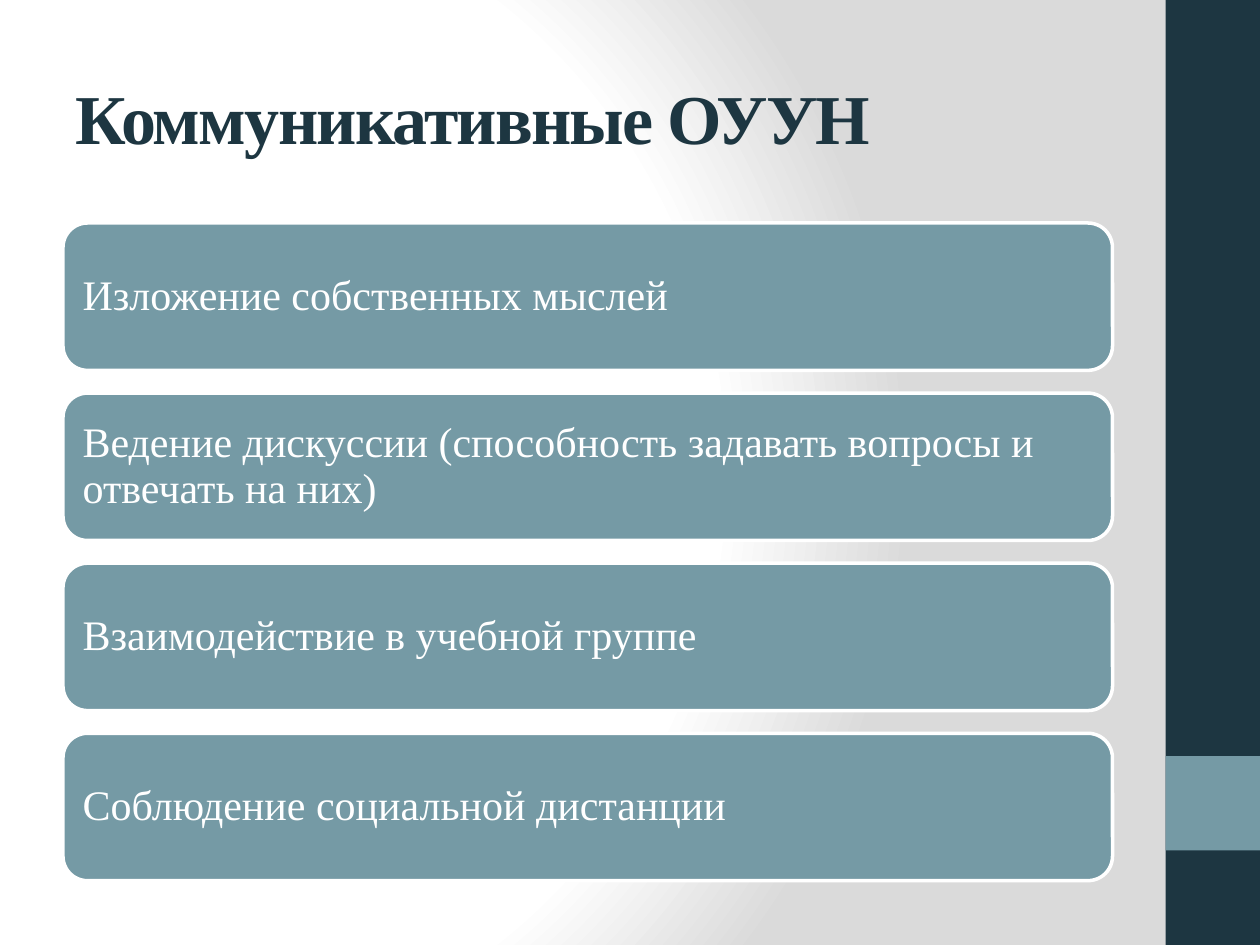
from pptx import Presentation
from pptx.dml.color import RGBColor
from pptx.enum.shapes import MSO_SHAPE as Shape
from pptx.enum.text import MSO_ANCHOR as Anchor, PP_ALIGN as Align
from pptx.oxml import parse_xml
from pptx.oxml.ns import nsdecls, qn
from pptx.util import Inches, Pt

TITLE = "Коммуникативные ОУУН"
SKILLS = [
    "Изложение собственных мыслей",
    "Ведение дискуссии (способность задавать вопросы и отвечать на них)",
    "Взаимодействие в учебной группе",
    "Соблюдение социальной дистанции",
]
FONT = "Times New Roman"
DARK, TEAL, WHITE, GREY = "1D3641", "759AA5", "FFFFFF", "DADADA"
BACKGROUND_STOPS = [(0, WHITE), (75, WHITE), (100, GREY)]
SIDE_BARS = [(0, 7.5, DARK), (6, 0.75, TEAL)]
LEFT, WIDTH = 0.5, 8.33
CARD_TOP, CARD_HEIGHT, CARD_STEP = 1.77, 1.17, 1.35


def color(value):
    return RGBColor.from_string(value)


def set_background(slide):
    slide.background.fill.solid()
    stops = "".join(
        f'<a:gs pos="{position * 1000}"><a:srgbClr val="{value}"/></a:gs>'
        for position, value in BACKGROUND_STOPS
    )
    gradient = parse_xml(
        f'<a:gradFill {nsdecls("a")} rotWithShape="1"><a:gsLst>{stops}</a:gsLst>'
        '<a:path path="circle"><a:fillToRect l="20000" t="50000" r="100000" b="50000"/>'
        "</a:path></a:gradFill>"
    )
    solid = next(slide.element.iter(qn("a:solidFill")))
    solid.getparent().replace(solid, gradient)


def add_block(slide, kind, box, fill):
    shape = slide.shapes.add_shape(kind, *map(Inches, box))
    shape.shadow.inherit = False
    shape.fill.solid()
    shape.fill.fore_color.rgb = color(fill)
    shape.line.fill.background()
    return shape


def write_text(shape, text, size, fill):
    frame = shape.text_frame
    frame.word_wrap = True
    frame.vertical_anchor = Anchor.MIDDLE
    frame.text = text
    paragraph = frame.paragraphs[0]
    paragraph.alignment = Align.LEFT
    paragraph.font.name = FONT
    paragraph.font.size = Pt(size)
    paragraph.font.color.rgb = color(fill)
    return paragraph


def add_title(slide):
    title = slide.shapes.title
    title.left, title.top = Inches(LEFT), Inches(0.3)
    title.width, title.height = Inches(WIDTH), Inches(1.25)
    paragraph = write_text(title, TITLE, 40, DARK)
    paragraph.font.bold = True
    paragraph.runs[0].font._element.set("spc", "-100")


def add_card(slide, index, text):
    top = CARD_TOP + index * CARD_STEP
    card = add_block(slide, Shape.ROUNDED_RECTANGLE, (LEFT, top, WIDTH, CARD_HEIGHT), TEAL)
    card.line.color.rgb = color(WHITE)
    card.line.width = Pt(2)
    frame = card.text_frame
    frame.margin_left = frame.margin_right = Inches(0.1)
    frame.margin_top = frame.margin_bottom = Inches(0.1)
    write_text(card, text, 24, WHITE).line_spacing = 0.9


def main():
    presentation = Presentation()
    presentation.slide_width, presentation.slide_height = Inches(10), Inches(7.5)
    slide = presentation.slides.add_slide(presentation.slide_layouts.get_by_name("Title Only"))
    set_background(slide)
    for top, height, fill in SIDE_BARS:
        add_block(slide, Shape.RECTANGLE, (9.25, top, 0.75, height), fill)
    add_title(slide)
    for index, text in enumerate(SKILLS):
        add_card(slide, index, text)
    presentation.save("out.pptx")


if __name__ == "__main__":
    main()
